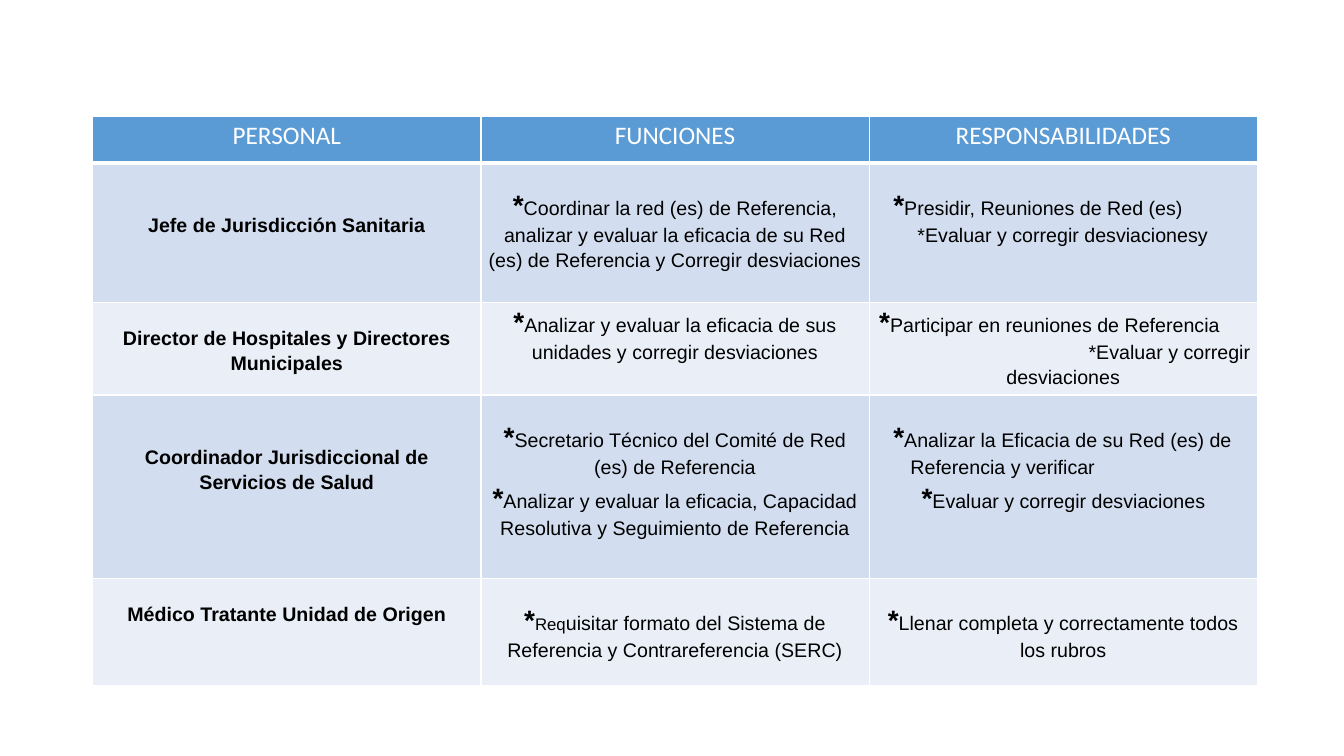
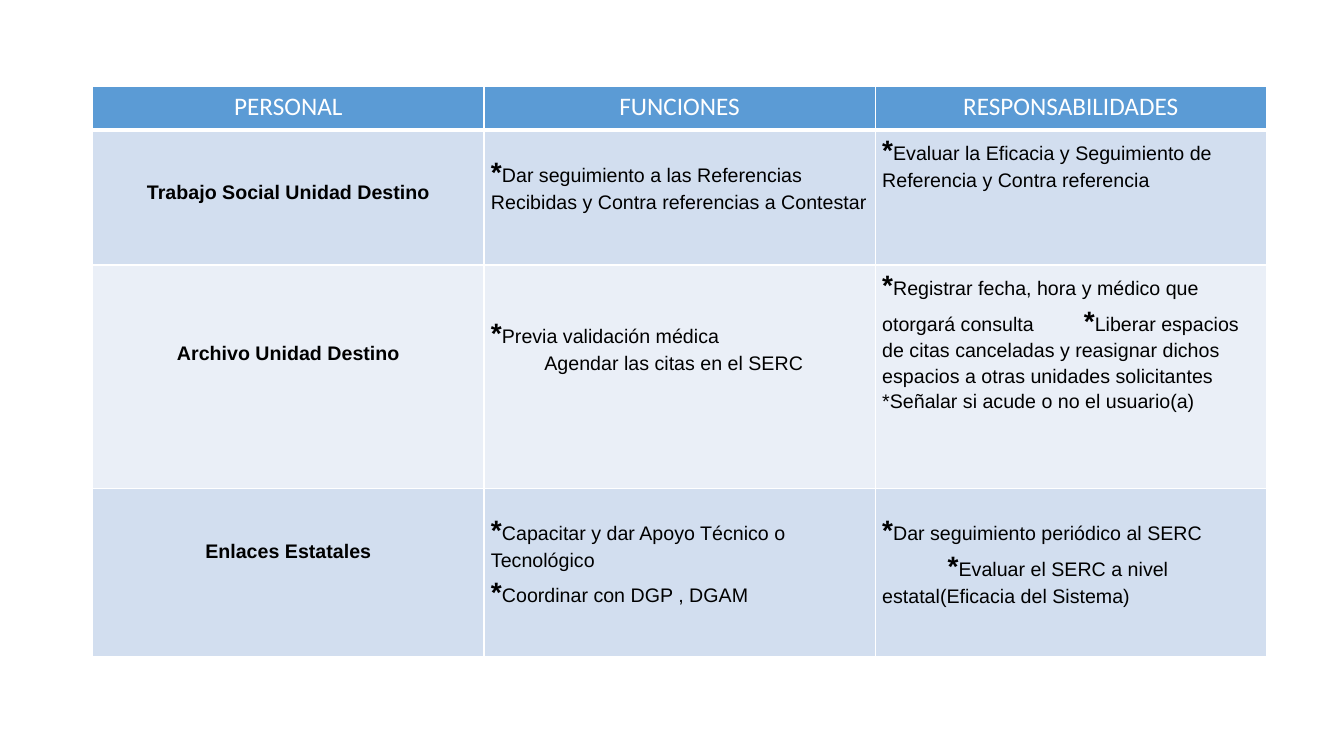
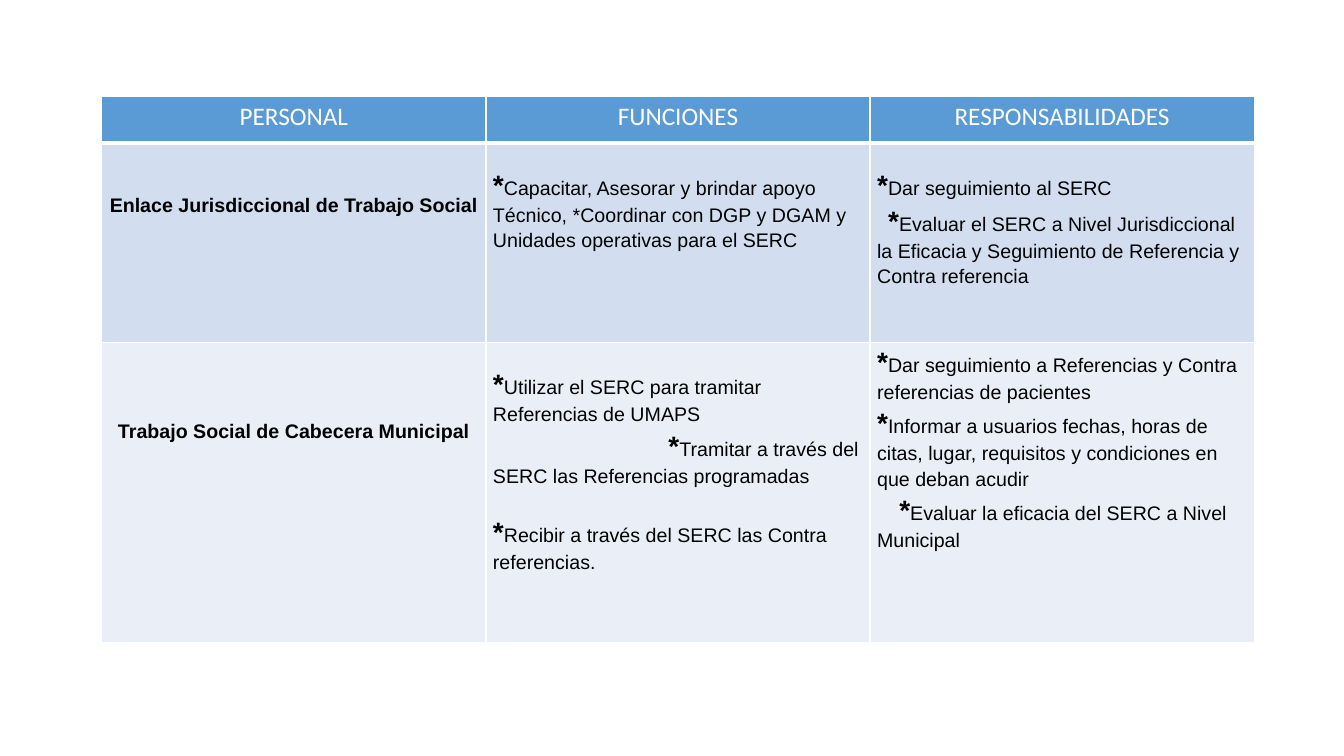
from dataclasses import dataclass
from lxml.etree import SubElement
from pptx import Presentation
from pptx.dml.color import RGBColor
from pptx.enum.text import PP_ALIGN
from pptx.oxml.ns import qn
from pptx.util import Inches, Pt

COLORS = {"header": "5B9BD5", "odd": "D2DEEF", "even": "EAEFF7",
          "rule": "FFFFFF", "heading": "FFFFFF", "body": "000000"}
HEADINGS = ["PERSONAL", "FUNCIONES", "RESPONSABILIDADES"]
LEFT, CENTER, RIGHT = PP_ALIGN.LEFT, PP_ALIGN.CENTER, PP_ALIGN.RIGHT
STAR = ("*", 20, True)


@dataclass
class Entry:
    """One paragraph: its runs, and its indents and tab in inches."""
    runs: list
    align: object = LEFT
    margin: float = 0
    first: float = 0
    tab: float = 0
    before: float = 0


def plain(text, **placing):
    """Return an entry of regular text."""
    return Entry([(text, 14, False)], **placing)


def starred(text, **placing):
    """Return an entry that opens with a large asterisk."""
    return Entry([STAR, (text, 14, False)], **placing)


def role(name):
    """Return the entry that names the staff member."""
    return Entry([(name, 14, True)], align=CENTER)


def rgb(key):
    """Look up a colour of the palette."""
    return RGBColor.from_string(COLORS[key])


def draw_borders(cell, bottom):
    """Rule the four sides of a cell."""
    properties = cell._tc.get_or_add_tcPr()
    for side, points in (("L", 1), ("R", 1), ("T", 1), ("B", bottom)):
        line = SubElement(properties, qn(f"a:ln{side}"), w=str(Pt(points)))
        fill = SubElement(line, qn("a:solidFill"))
        SubElement(fill, qn("a:srgbClr"), val=COLORS["rule"])


def style_cell(cell, fill, side, top, bottom, rule):
    """Set the margins, borders and fill of a cell."""
    cell.margin_left = cell.margin_right = Inches(side)
    cell.margin_top, cell.margin_bottom = Inches(top), Inches(bottom)
    draw_borders(cell, rule)
    cell.fill.solid()
    cell.fill.fore_color.rgb = rgb(fill)


def write_run(paragraph, text, size, bold, font, color):
    """Add one formatted run."""
    run = paragraph.add_run()
    run.text = text
    run.font.size, run.font.bold, run.font.name = Pt(size), bold, font
    run.font.color.rgb = rgb(color)


def write_entry(paragraph, entry):
    """Place one body paragraph and its runs."""
    paragraph.alignment = entry.align
    paragraph.line_spacing = 1.15
    if entry.before:
        paragraph.space_before = Pt(entry.before)
    properties = paragraph._p.get_or_add_pPr()
    properties.set("marL", str(Inches(entry.margin)))
    properties.set("indent", str(Inches(entry.first)))
    if entry.tab:
        stops = SubElement(properties, qn("a:tabLst"))
        SubElement(stops, qn("a:tab"), pos=str(Inches(entry.tab)), algn="l")
    for text, size, bold in entry.runs:
        write_run(paragraph, text, size, bold, "Arial", "body")


def fill_heading(cell, heading):
    """Fill one cell of the heading row."""
    style_cell(cell, "header", 0.1, 0.05, 0.05, 3)
    paragraph = cell.text_frame.paragraphs[0]
    paragraph.alignment = CENTER
    write_run(paragraph, heading, 18, False, "Calibri", "heading")


def fill_body(cell, drop, entries, fill):
    """Fill a body cell whose text starts a number of lines down."""
    top = 0.22 + 0.26 * (drop - 1) if drop else 0
    style_cell(cell, fill, 0.07, top, 0, 1)
    frame = cell.text_frame
    for index, entry in enumerate(entries):
        write_entry(frame.add_paragraph() if index else frame.paragraphs[0], entry)


def add_staff_slide(deck, box, heights, staff):
    """Add a slide with a staff table in the box left, top, width."""
    slide = deck.slides.add_slide(deck.slide_layouts[6])
    left, top, width = box
    table = slide.shapes.add_table(
        len(heights), len(HEADINGS), Inches(left), Inches(top),
        Inches(width), Inches(sum(heights))).table
    table.first_row = table.horz_banding = False
    for column in table.columns:
        column.width = Inches(width / len(HEADINGS))
    for row, height in zip(table.rows, heights):
        row.height = Inches(height)
    for column, heading in enumerate(HEADINGS):
        fill_heading(table.cell(0, column), heading)
    for row, member in enumerate(staff, 1):
        for column, (drop, *entries) in enumerate(member):
            fill_body(table.cell(row, column), drop, entries,
                      "odd" if row % 2 else "even")


DIRECTORS = [
    [(2, role("Jefe de Jurisdicción Sanitaria")),
     (1, starred("Coordinar la red (es) de Referencia, analizar y evaluar la eficacia "
                 "de su Red (es) de Referencia y Corregir desviaciones", align=CENTER)),
     (1, starred("Presidir, Reuniones de Red (es)", margin=0.17),
      plain("*Evaluar y corregir desviacionesy", margin=0.41))],
    [(1, role("Director de Hospitales y Directores Municipales")),
     (0, starred("Analizar y evaluar la eficacia de sus unidades y corregir "
                 "desviaciones", align=CENTER)),
     (0, starred("Participar en reuniones de Referencia", margin=0.03),
      plain("*Evaluar y corregir", align=RIGHT),
      plain("desviaciones", align=CENTER))],
    [(2, role("Coordinador Jurisdiccional de Servicios de Salud")),
     (1, starred("Secretario Técnico del Comité de Red (es) de Referencia", align=CENTER),
      starred("Analizar y evaluar la eficacia, Capacidad Resolutiva y Seguimiento "
              "de Referencia", align=CENTER)),
     (1, starred("Analizar la Eficacia de su Red (es) de Referencia y verificar",
                 margin=0.34, first=-0.17),
      starred("Evaluar y corregir desviaciones", margin=0.45))],
    [(1, role("Médico Tratante Unidad de Origen")),
     (1, Entry([STAR, ("Req", 12, False),
                ("uisitar formato del Sistema de Referencia y Contrareferencia (SERC)",
                 14, False)], align=CENTER)),
     (1, starred("Llenar completa y correctamente todos los rubros", align=CENTER))],
]

DESTINATION = [
    [(2, role("Trabajo Social Unidad Destino")),
     (1, starred("Dar seguimiento a las Referencias Recibidas y Contra referencias "
                 "a Contestar")),
     (0, starred("Evaluar la Eficacia y Seguimiento de Referencia y Contra referencia"))],
    [(3, role("Archivo Unidad Destino")),
     (2, starred("Previa validación médica"),
      plain("Agendar las citas en el SERC", margin=0.53)),
     (0, Entry([STAR, ("Registrar fecha, hora y médico que otorgará consulta\t", 14, False),
                STAR, ("Liberar espacios de citas canceladas y reasignar dichos espacios "
                       "a otras unidades solicitantes", 14, False)], tab=2.64),
      plain("*Señalar si acude o no el usuario(a)"))],
    [(2, role("Enlaces Estatales")),
     (1, starred("Capacitar y dar Apoyo Técnico o Tecnológico"),
      starred("Coordinar con DGP , DGAM")),
     (1, starred("Dar seguimiento periódico al SERC"),
      starred("Evaluar el SERC a nivel estatal(Eficacia del Sistema)", first=0.65))],
]

SOCIAL_WORK = [
    [(2, role("Enlace Jurisdiccional de Trabajo Social")),
     (1, starred("Capacitar, Asesorar y brindar apoyo Técnico, *Coordinar con DGP y "
                 "DGAM y Unidades operativas para el SERC")),
     (1, starred("Dar seguimiento al SERC"),
      starred("Evaluar el SERC a Nivel Jurisdiccional la Eficacia y Seguimiento de "
              "Referencia y Contra referencia", first=0.11))],
    [(3, role("Trabajo Social de Cabecera Municipal")),
     (1, starred("Utilizar el SERC para tramitar Referencias de UMAPS"),
      starred("Tramitar a través del SERC las Referencias programadas", first=1.74),
      starred("Recibir a través del SERC las Contra referencias.", before=18)),
     (0, starred("Dar seguimiento a Referencias y Contra referencias de pacientes"),
      starred("Informar a usuarios fechas, horas de citas, lugar, requisitos y "
              "condiciones en que deban acudir"),
      starred("Evaluar la eficacia del SERC a Nivel Municipal", first=0.22))],
]


def main():
    """Build and save the deck."""
    deck = Presentation()
    deck.slide_width, deck.slide_height = Inches(13.33), Inches(7.5)
    add_staff_slide(deck, (0.92, 1.15, 11.55), [0.47, 1.38, 0.92, 1.82, 1.06], DIRECTORS)
    add_staff_slide(deck, (0.92, 0.86, 11.64), [0.43, 1.34, 2.22, 1.66], DESTINATION)
    add_staff_slide(deck, (1.01, 0.96, 11.43), [0.46, 1.98, 2.98], SOCIAL_WORK)
    deck.save("out.pptx")


if __name__ == "__main__":
    main()
